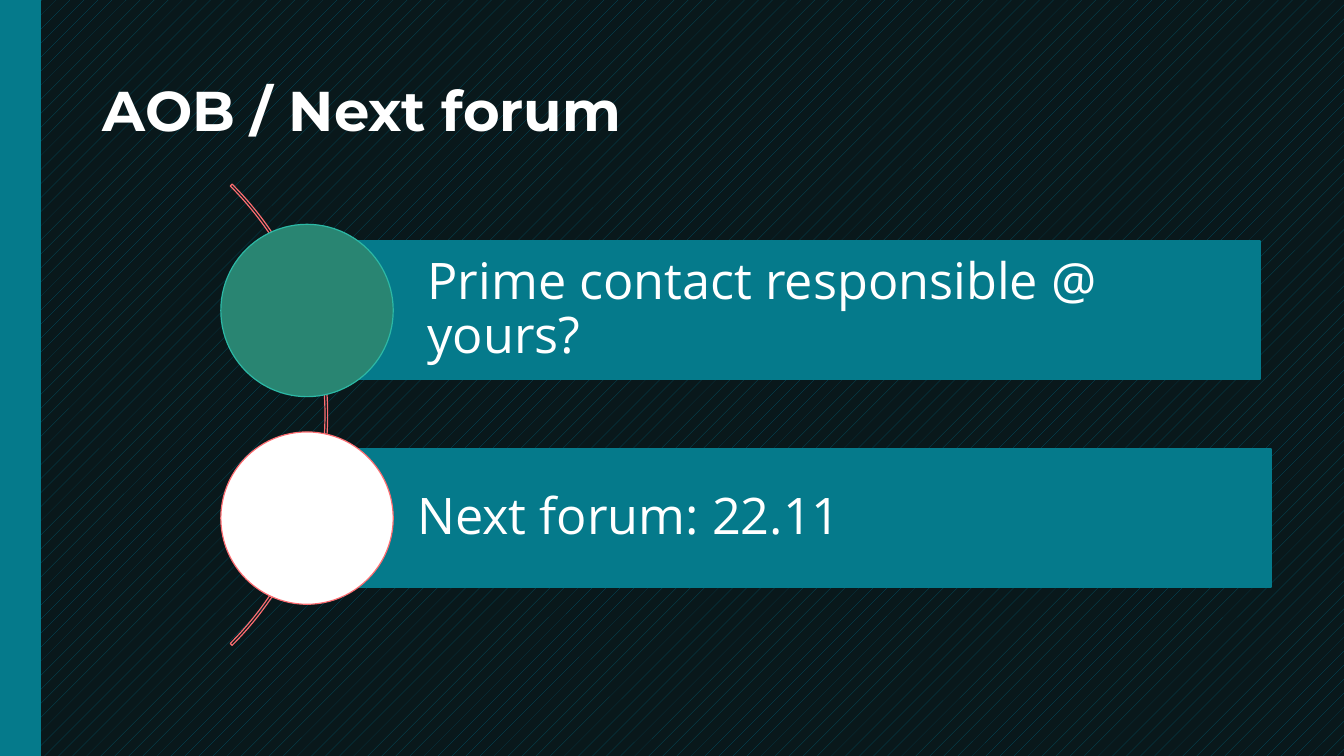
from dataclasses import dataclass

from lxml import etree
from pptx import Presentation
from pptx.dml.color import RGBColor
from pptx.enum.dml import MSO_PATTERN
from pptx.enum.shapes import MSO_CONNECTOR, MSO_SHAPE
from pptx.enum.text import MSO_ANCHOR, MSO_AUTO_SIZE, PP_ALIGN
from pptx.oxml.ns import qn
from pptx.util import Inches, Pt

PERCENT_5 = MSO_PATTERN.PERCENT_5
STRAIGHT = MSO_CONNECTOR.STRAIGHT
ARC, RECTANGLE, OVAL = MSO_SHAPE.BLOCK_ARC, MSO_SHAPE.RECTANGLE, MSO_SHAPE.OVAL
MIDDLE, LEFT, NO_FIT = MSO_ANCHOR.MIDDLE, PP_ALIGN.LEFT, MSO_AUTO_SIZE.NONE

NIGHT = RGBColor(0x09, 0x18, 0x1B)
DEEP_TEAL = RGBColor(0x00, 0x56, 0x6B)
TEAL = RGBColor(0x05, 0x7A, 0x8B)
CORAL = RGBColor(0xFC, 0x6D, 0x71)
GREEN = RGBColor(0x29, 0x85, 0x72)
MINT = RGBColor(0x2C, 0xB8, 0xA5)
WHITE = RGBColor(0xFF, 0xFF, 0xFF)

SLIDE_WIDTH, SLIDE_HEIGHT = 13.33, 7.5
ARC_LEFT, ARC_TOP, ARC_SIZE = -3.22, 0.88, 6.47
CIRCLE_LEFT, CIRCLE_SIZE = 2.19, 1.71
BAR_HEIGHT = 1.37
FIRST_CENTER, TOPIC_PITCH = 3.08, 2.06
THIN = 0.85

TITLE_FONT = {"name": "Montserrat", "size": Pt(40), "bold": True}
TOPIC_FONT = {"name": "Open Sans", "size": Pt(36), "bold": False}
TITLE_FRAME = {"vertical_anchor": MIDDLE, "word_wrap": True, "auto_size": NO_FIT}
TOPIC_FRAME = TITLE_FRAME | {
    "margin_left": Inches(1.09),
    "margin_right": Inches(0.1),
    "margin_top": Inches(0.1),
    "margin_bottom": Inches(0.1),
}
PARAGRAPH = {"alignment": LEFT, "line_spacing": 0.9}


@dataclass
class Topic:
    text: str
    left: float
    width: float
    circle_fill: RGBColor
    circle_line: RGBColor


TOPICS = [
    Topic("Prime contact responsible @ yours?", 3.15, 9.35, GREEN, MINT),
    Topic("Next forum: 22.11", 3.05, 9.56, WHITE, CORAL),
]


def apply_format(target, values: dict) -> None:
    for name, value in values.items():
        setattr(target, name, value)


def write_text(shape, text: str, frame_format: dict, font_format: dict) -> None:
    frame = shape.text_frame
    frame.text = text
    apply_format(frame, frame_format)
    paragraph = frame.paragraphs[0]
    apply_format(paragraph, PARAGRAPH)
    apply_format(paragraph.font, font_format)
    paragraph.font.color.rgb = WHITE


def add_outlined(slide, kind, left: float, top: float, width: float, height: float,
                 fill: RGBColor | None, line: RGBColor, weight: float):
    shape = slide.shapes.add_shape(
        kind, Inches(left), Inches(top), Inches(width), Inches(height))
    shape.shadow.inherit = False
    if fill is None:
        shape.fill.background()
    else:
        shape.fill.solid()
        shape.fill.fore_color.rgb = fill
    shape.line.color.rgb = line
    shape.line.width = Pt(weight)
    return shape


def add_side_stripe(slide) -> None:
    stripe = slide.shapes.add_connector(
        STRAIGHT, Inches(0.2), 0, Inches(0.2), Inches(SLIDE_HEIGHT))
    stripe.line.color.rgb = TEAL
    stripe.line.width = Pt(30)
    etree.SubElement(stripe._element.spPr, qn("a:effectLst"))


def add_arc(slide) -> None:
    arc = add_outlined(slide, ARC, ARC_LEFT, ARC_TOP, ARC_SIZE, ARC_SIZE, None, CORAL, THIN)
    for index, value in enumerate((189, 27, 0.004)):
        arc.adjustments[index] = value


def add_topic(slide, topic: Topic, center: float) -> None:
    bar = add_outlined(slide, RECTANGLE, topic.left, center - BAR_HEIGHT / 2,
                       topic.width, BAR_HEIGHT, TEAL, TEAL, 1.5)
    write_text(bar, topic.text, TOPIC_FRAME, TOPIC_FONT)
    add_outlined(slide, OVAL, CIRCLE_LEFT, center - CIRCLE_SIZE / 2,
                 CIRCLE_SIZE, CIRCLE_SIZE, topic.circle_fill, topic.circle_line, THIN)


def main() -> None:
    presentation = Presentation()
    presentation.slide_width = Inches(SLIDE_WIDTH)
    presentation.slide_height = Inches(SLIDE_HEIGHT)
    slide = presentation.slides.add_slide(presentation.slide_layouts[5])

    backdrop = slide.background.fill
    backdrop.patterned()
    backdrop.pattern = PERCENT_5
    backdrop.fore_color.rgb = DEEP_TEAL
    backdrop.back_color.rgb = NIGHT

    title = slide.shapes.title
    apply_format(title, {"left": Inches(0.92), "top": Inches(0.4),
                         "width": Inches(11.5), "height": Inches(1.45)})
    write_text(title, "AOB / Next forum", TITLE_FRAME, TITLE_FONT)

    add_side_stripe(slide)
    add_arc(slide)
    for index, topic in enumerate(TOPICS):
        add_topic(slide, topic, FIRST_CENTER + index * TOPIC_PITCH)

    presentation.save("out.pptx")


if __name__ == "__main__":
    main()
